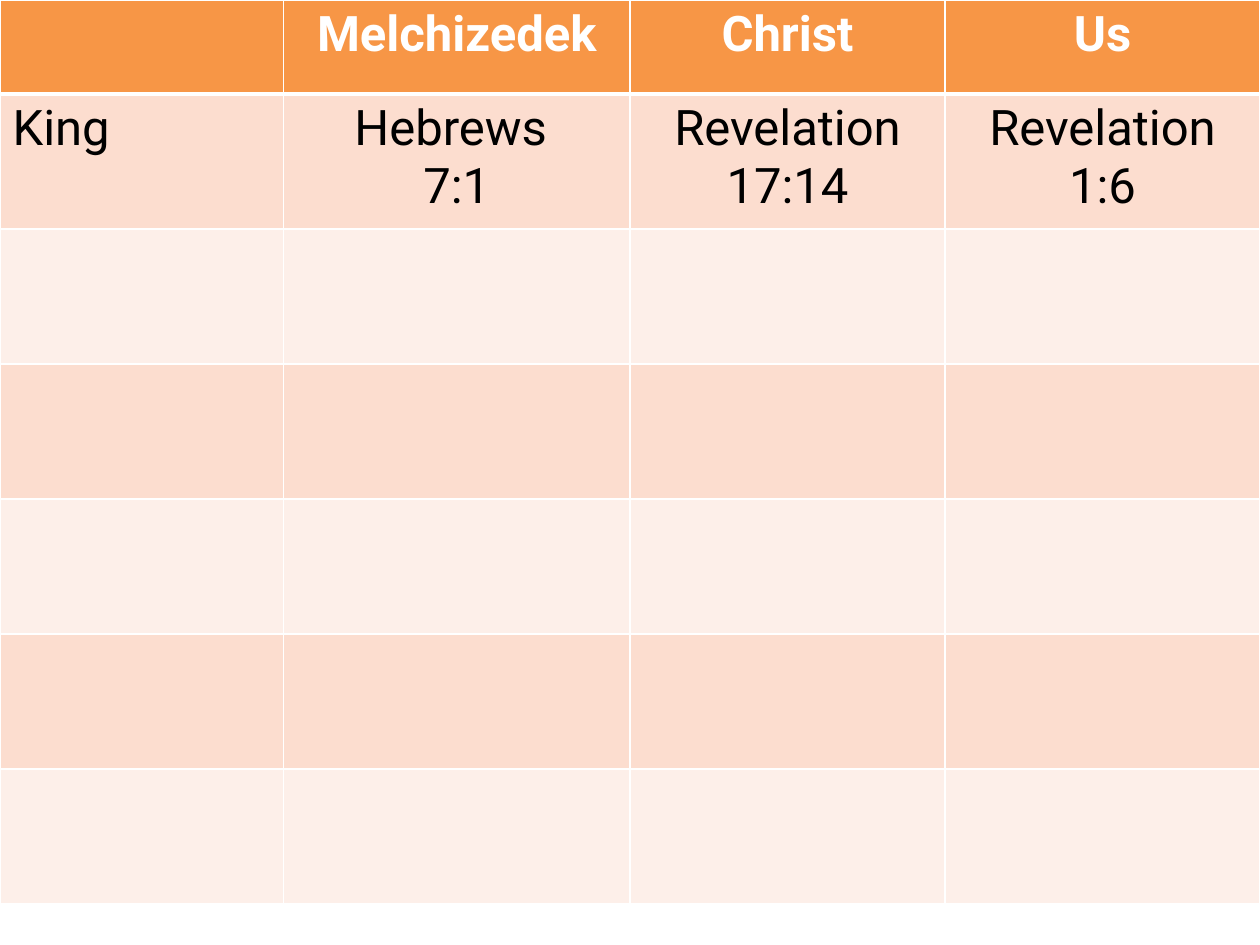
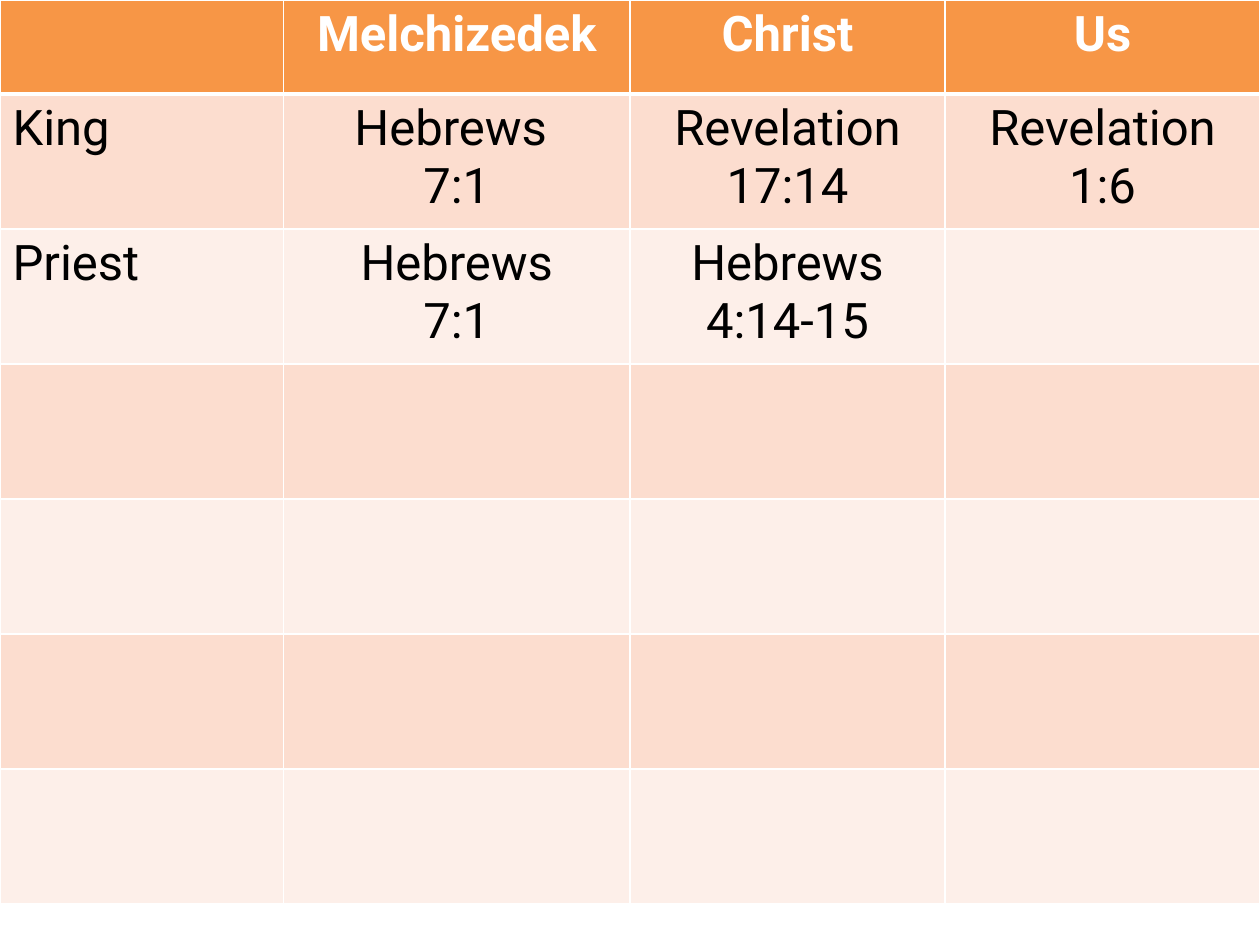
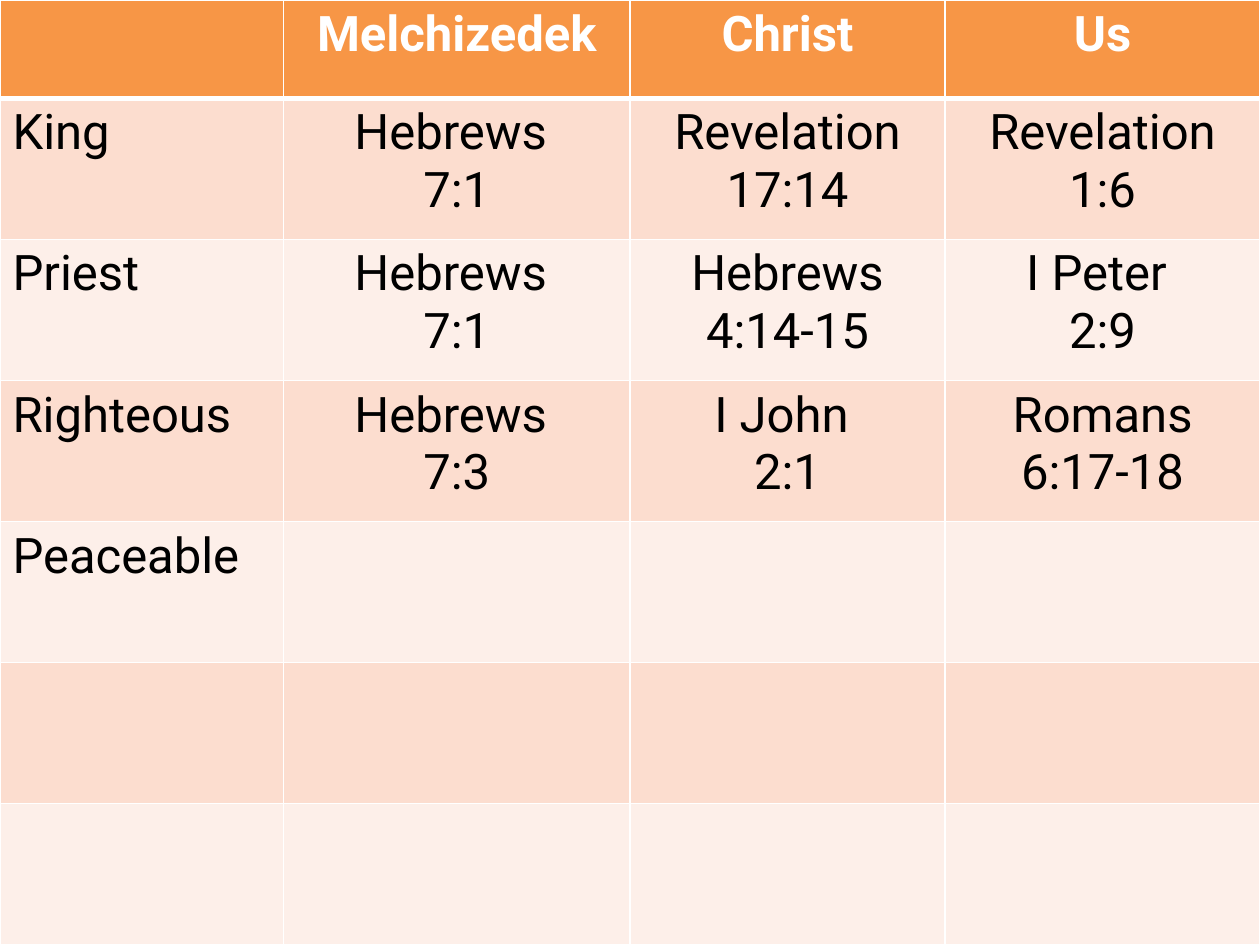
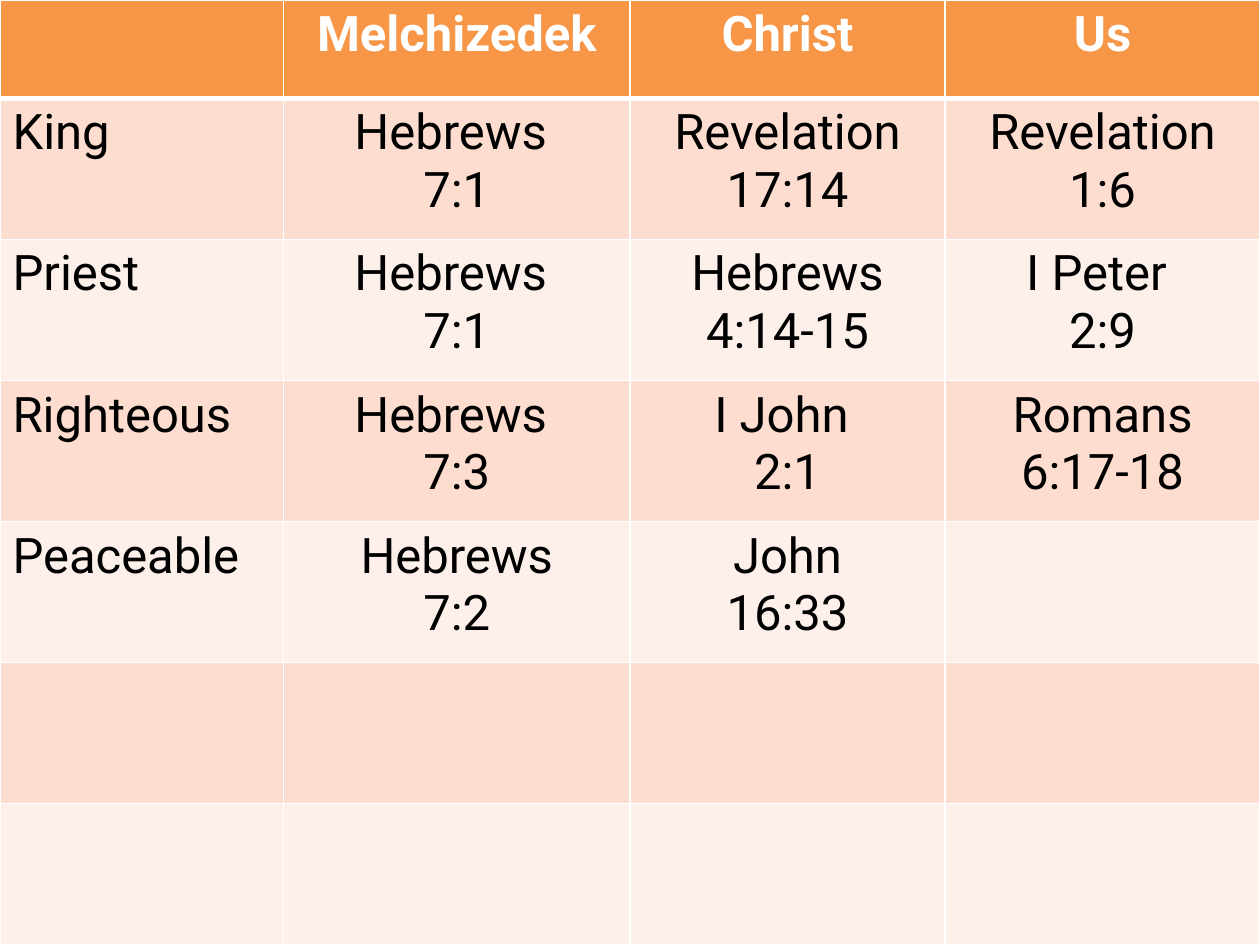
from dataclasses import dataclass

from lxml import etree
from pptx import Presentation
from pptx import util as u
from pptx.dml.color import RGBColor
from pptx.enum import text
from pptx.oxml.ns import qn

COLORS = {
    "header": "F79646",
    "band_dark": "FCDDCF",
    "band_light": "FDEFE9",
    "border": "FFFFFF",
    "header_text": "FFFFFF",
    "body_text": "000000",
}
FONT, FONT_SIZE = "Roboto", u.Pt(28)
SLIDE_WIDTH, SLIDE_HEIGHT = u.Inches(10), u.Inches(7.5)

# Shared grid: column widths and header height as shares of the table
COLUMN_SHARES = (0.225, 0.275, 0.25, 0.25)
HEADER_SHARE = 0.104
BODY_ROWS = 6
THIN, THICK = u.Pt(1), u.Pt(3)


@dataclass(frozen=True)
class Trait:
    """One table row; a line break in a passage starts a new paragraph."""
    name: str
    melchizedek: str = ""
    christ: str = ""
    us: str = ""

    def cells(self) -> tuple[str, ...]:
        return self.name, self.melchizedek, self.christ, self.us


@dataclass(frozen=True)
class Comparison:
    """One slide: its traits and the share of the slide's height it fills."""
    traits: tuple[Trait, ...]
    height_share: float


HEADER = Trait("", "Melchizedek", "Christ", "Us")
KING = Trait("King", "Hebrews \n7:1", "Revelation 17:14", "Revelation 1:6")
PRIEST = Trait("Priest", "Hebrews \n7:1", "Hebrews 4:14-15", "I Peter \n2:9")
RIGHTEOUS = Trait("Righteous", "Hebrews \n7:3", "I John \n2:1", "Romans 6:17-18")

# The comparison grows from slide to slide
COMPARISONS = (
    Comparison((KING,), 0.957),
    Comparison((KING, Trait("Priest", "Hebrews\n7:1", "Hebrews 4:14-15")), 0.957),
    Comparison((KING, PRIEST, RIGHTEOUS, Trait("Peaceable")), 1),
    Comparison((KING, PRIEST, RIGHTEOUS,
                Trait("Peaceable", "Hebrews\n7:2", "John\n16:33")), 1),
)


def set_borders(cell, top: int, bottom: int) -> None:
    properties = cell._tc.get_or_add_tcPr()
    widths = {"a:lnL": THIN, "a:lnR": THIN, "a:lnT": top, "a:lnB": bottom}
    for tag, width in widths.items():
        line = etree.SubElement(properties, qn(tag), w=str(int(width)))
        fill = etree.SubElement(line, qn("a:solidFill"))
        etree.SubElement(fill, qn("a:srgbClr"), val=COLORS["border"])


def write_cell(cell, content: str, centered: bool, is_header: bool) -> None:
    color = COLORS["header_text" if is_header else "body_text"]
    for index, line in enumerate(content.split("\n")):
        frame = cell.text_frame
        paragraph = frame.add_paragraph() if index else frame.paragraphs[0]
        if centered:
            paragraph.alignment = text.PP_ALIGN.CENTER
        run = paragraph.add_run()
        run.text = line
        run.font.name = FONT
        run.font.size = FONT_SIZE
        run.font.bold = is_header
        run.font.color.rgb = RGBColor.from_string(color)


def row_fill(row: int) -> str:
    if row == 0:
        return COLORS["header"]
    return COLORS["band_dark" if row % 2 else "band_light"]


def add_comparison(slide, comparison: Comparison) -> None:
    height = int(SLIDE_HEIGHT * comparison.height_share)
    table = slide.shapes.add_table(
        BODY_ROWS + 1, len(COLUMN_SHARES), 0, 0, SLIDE_WIDTH, height).table
    table.horz_banding = False

    # Grid
    for column, share in zip(table.columns, COLUMN_SHARES):
        column.width = int(SLIDE_WIDTH * share)
    header_height = int(height * HEADER_SHARE)
    for index, row in enumerate(table.rows):
        row.height = (height - header_height) // BODY_ROWS if index else header_height

    # Cell borders and fills; the heavy rule lies under the header
    for row_index, row in enumerate(table.rows):
        for cell in row.cells:
            set_borders(cell, top=THICK if row_index == 1 else THIN,
                        bottom=THICK if row_index == 0 else THIN)
            cell.fill.solid()
            cell.fill.fore_color.rgb = RGBColor.from_string(row_fill(row_index))

    # Wording
    for row_index, trait in enumerate((HEADER, *comparison.traits)):
        for column_index, content in enumerate(trait.cells()):
            if content:
                write_cell(table.cell(row_index, column_index), content,
                           centered=column_index > 0, is_header=row_index == 0)


def main() -> None:
    presentation = Presentation()
    presentation.slide_width, presentation.slide_height = SLIDE_WIDTH, SLIDE_HEIGHT
    blank_layout = presentation.slide_layouts[6]
    for comparison in COMPARISONS:
        add_comparison(presentation.slides.add_slide(blank_layout), comparison)
    presentation.save("out.pptx")


if __name__ == "__main__":
    main()
